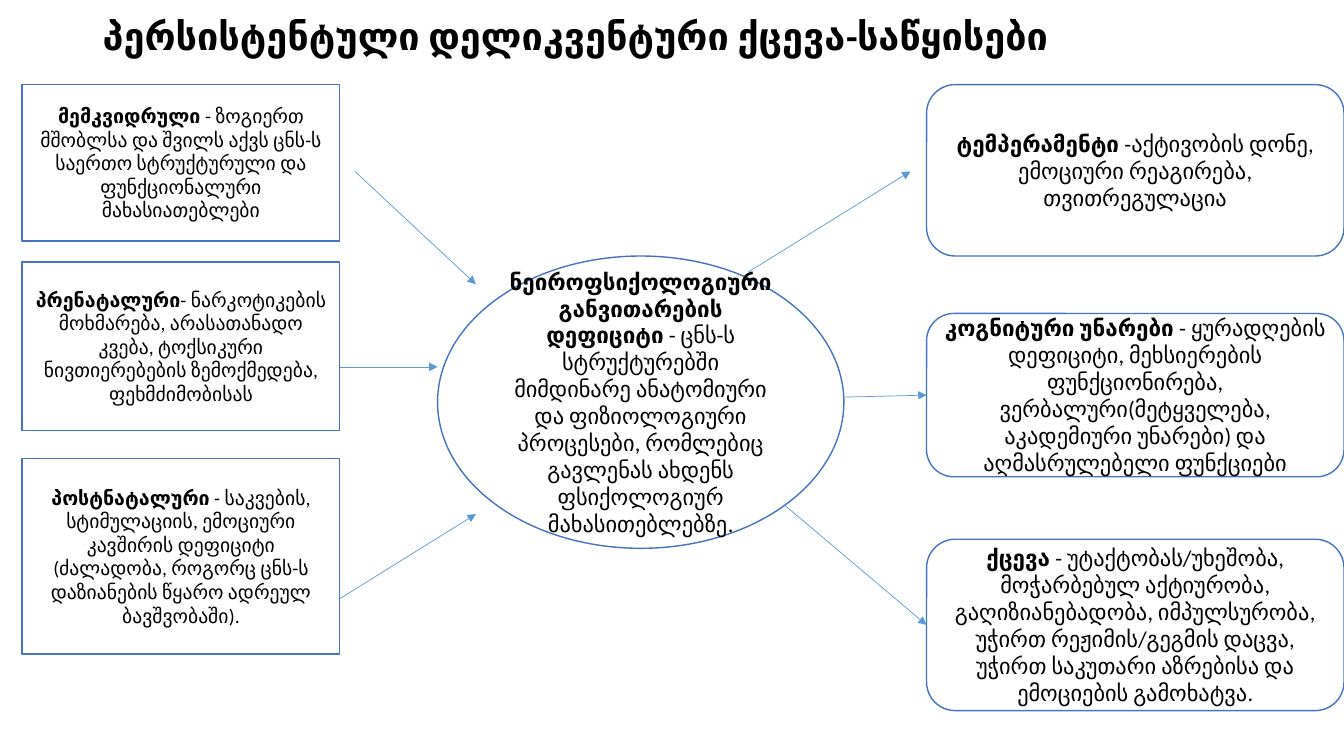
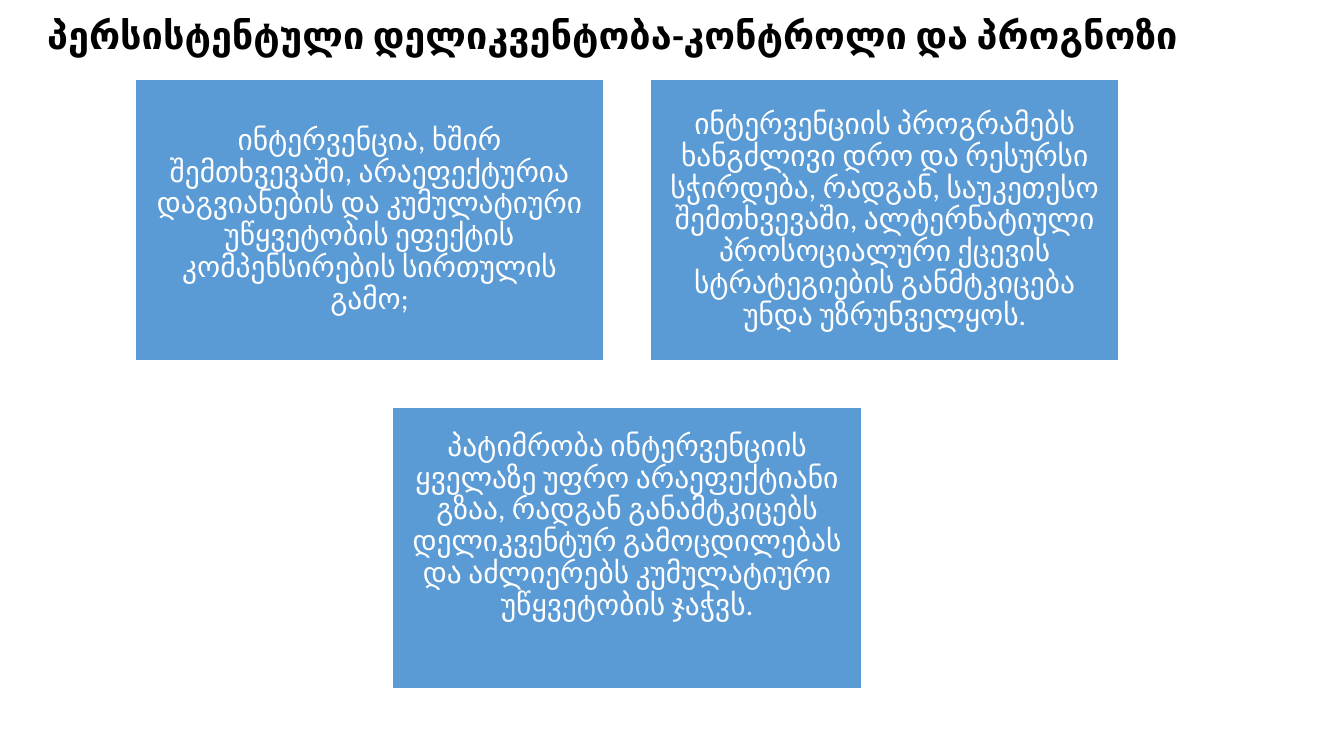
import lxml.etree
import pptx
import pptx.dml.color
import pptx.enum.shapes
import pptx.enum.text
import pptx.oxml.ns
import pptx.util

Inches = pptx.util.Inches
Pt = pptx.util.Pt
Preset = pptx.enum.shapes.MSO_SHAPE
Align = pptx.enum.text.PP_ALIGN

BLACK = pptx.dml.color.RGBColor(0x00, 0x00, 0x00)
WHITE = pptx.dml.color.RGBColor(0xFF, 0xFF, 0xFF)
OUTLINE = pptx.dml.color.RGBColor(0x44, 0x72, 0xC4)
ACCENT = pptx.dml.color.RGBColor(0x5B, 0x9B, 0xD5)
FONT = "Calibri"

CAUSES = [
    (0.84, 1.55, "მემკვიდრული",
     " - ზოგიერთ მშობლსა და შვილს აქვს ცნს-ს საერთო სტრუქტურული და "
     "ფუნქციონალური მახასიათებლები"),
    (2.6, 1.67, "პრენატალური",
     "- ნარკოტიკების მოხმარება, არასათანადო კვება, ტოქსიკური ნივთიერებების "
     "ზემოქმედება, ფეხმძიმობისას"),
    (4.55, 1.94, "პოსტნატალური",
     " - საკვების, სტიმულაციის, ემოციური კავშირის დეფიციტი (ძალადობა, როგორც "
     "ცნს-ს დაზიანების წყარო ადრეულ ბავშვობაში)."),
]
EFFECTS = [
    (0.84, 1.7, "ტემპერამენტი ",
     "-აქტივობის დონე, ემოციური რეაგირება, თვითრეგულაცია"),
    (3.11, 1.62, "კოგნიტური უნარები ",
     "- ყურადღების დეფიციტი, მეხსიერების ფუნქციონირება, ვერბალური(მეტყველება, "
     "აკადემიური უნარები) და აღმასრულებელი ფუნქციები"),
    (5.35, 1.7, "ქცევა",
     " - უტაქტობას/უხეშობა, მოჭარბებულ აქტიურობა, გაღიზიანებადობა, "
     "იმპულსურობა, უჭირთ რეჟიმის/გეგმის დაცვა, უჭირთ საკუთარი აზრებისა და "
     "ემოციების გამოხატვა."),
]
ARROWS = [
    ((3.52, 1.7), (4.72, 2.82)),
    ((3.37, 3.64), (4.34, 3.64)),
    ((3.37, 5.94), (4.72, 5.1)),
    ((7.42, 2.7), (9.03, 1.7)),
    ((7.78, 5.01), (9.19, 6.2)),
    ((8.37, 3.94), (9.19, 3.92)),
]
CARD_WIDTH, CARD_HEIGHT, CARD_GAP = 4.65, 2.79, 0.46
CARDS_LEFT, CARDS_TOP = 1.34, 0.79
CARDS = [
    (0, 0, 0.09,
     "ინტერვენცია, ხშირ შემთხვევაში, არაეფექტურია დაგვიანების და კუმულატიური "
     "უწყვეტობის ეფექტის კომპენსირების სირთულის გამო;"),
    (1, 0, 0.09,
     "ინტერვენციის პროგრამებს ხანგძლივი დრო და რესურსი სჭირდება, რადგან, "
     "საუკეთესო შემთხვევაში, ალტერნატიული პროსოციალური ქცევის სტრატეგიების "
     "განმტკიცება უნდა უზრუნველყოს."),
    (0.5, 1, 0.52,
     "პატიმრობა ინტერვენციის ყველაზე უფრო არაეფექტიანი გზაა, რადგან "
     "განამტკიცებს დელიკვენტურ გამოცდილებას და აძლიერებს კუმულატიური "
     "უწყვეტობის ჯაჭვს."),
]


def write(frame, text, lead="", size=16, color=BLACK, bold=False,
          align=Align.CENTER, spacing=1.0):
    frame.word_wrap = True
    frame.vertical_anchor = pptx.enum.text.MSO_ANCHOR.MIDDLE
    paragraph = frame.paragraphs[0]
    paragraph.alignment = align
    paragraph.line_spacing = spacing
    for words, weight in ((lead, True), (text, bold)):
        if words:
            run = paragraph.add_run()
            run.text = words
            run.font.name = FONT
            run.font.size = Pt(size)
            run.font.bold = weight
            run.font.color.rgb = color


class Deck:
    """Holds the shared style and the slide being built."""

    def __init__(self):
        self.show = pptx.Presentation()
        self.show.slide_width = Inches(13.33)
        self.show.slide_height = Inches(7.5)
        self.slide = None

    def start_slide(self, title, left, top, width, height):
        self.slide = self.show.slides.add_slide(self.show.slide_layouts[6])
        heading = self.slide.shapes.add_textbox(
            Inches(left), Inches(top), Inches(width), Inches(height))
        write(heading.text_frame, title, size=27, bold=True,
              align=Align.LEFT, spacing=0.9)

    def box(self, preset, left, top, width, height, text,
            fill=WHITE, outline=OUTLINE, **text_format):
        box = self.slide.shapes.add_shape(
            preset, Inches(left), Inches(top), Inches(width), Inches(height))
        box.shadow.inherit = False
        box.fill.solid()
        box.fill.fore_color.rgb = fill
        box.line.color.rgb = outline
        box.line.width = Pt(1)
        write(box.text_frame, text, **text_format)
        return box

    def card(self, column, row, bottom_inset, text):
        card = self.box(
            Preset.RECTANGLE,
            CARDS_LEFT + column * (CARD_WIDTH + CARD_GAP),
            CARDS_TOP + row * (CARD_HEIGHT + CARD_GAP),
            CARD_WIDTH, CARD_HEIGHT, text, fill=ACCENT, outline=WHITE,
            size=21, color=WHITE, spacing=0.9)
        frame = card.text_frame
        frame.margin_left = frame.margin_right = frame.margin_top = Inches(0.09)
        frame.margin_bottom = Inches(bottom_inset)

    def arrow(self, start, end):
        arrow = self.slide.shapes.add_connector(
            pptx.enum.shapes.MSO_CONNECTOR.STRAIGHT,
            *(Inches(length) for length in start + end))
        arrow.line.color.rgb = ACCENT
        arrow.line.width = Pt(0.5)
        qn = pptx.oxml.ns.qn
        properties = arrow.element.spPr
        lxml.etree.SubElement(
            properties.find(qn("a:ln")), qn("a:tailEnd"), type="triangle")
        lxml.etree.SubElement(properties, qn("a:effectLst"))


def main():
    deck = Deck()

    deck.start_slide("პერსისტენტული დელიკვენტური ქცევა-საწყისები",
                     0.92, 0.16, 11.5, 0.44)
    deck.box(Preset.OVAL, 4.34, 2.54, 4.03, 2.9,
             "- ცნს-ს სტრუქტურებში მიმდინარე ანატომიური და ფიზიოლოგიური "
             "პროცესები, რომლებიც გავლენას ახდენს ფსიქოლოგიურ მახასითებლებზე.",
             lead="ნეიროფსიქოლოგიური განვითარების დეფიციტი ")
    for top, height, cause, details in CAUSES:
        deck.box(Preset.RECTANGLE, 0.22, top, 3.15, height, details,
                 lead=cause, size=14)
    for top, height, effect, details in EFFECTS:
        deck.box(Preset.ROUNDED_RECTANGLE, 9.19, top, 4.14, height, details,
                 lead=effect)
    for start, end in ARROWS:
        deck.arrow(start, end)

    deck.start_slide("პერსისტენტული დელიკვენტობა-კონტროლი და პროგნოზი",
                     0.37, 0.13, 12.6, 0.48)
    for card in CARDS:
        deck.card(*card)

    deck.show.save("out.pptx")


if __name__ == "__main__":
    main()
